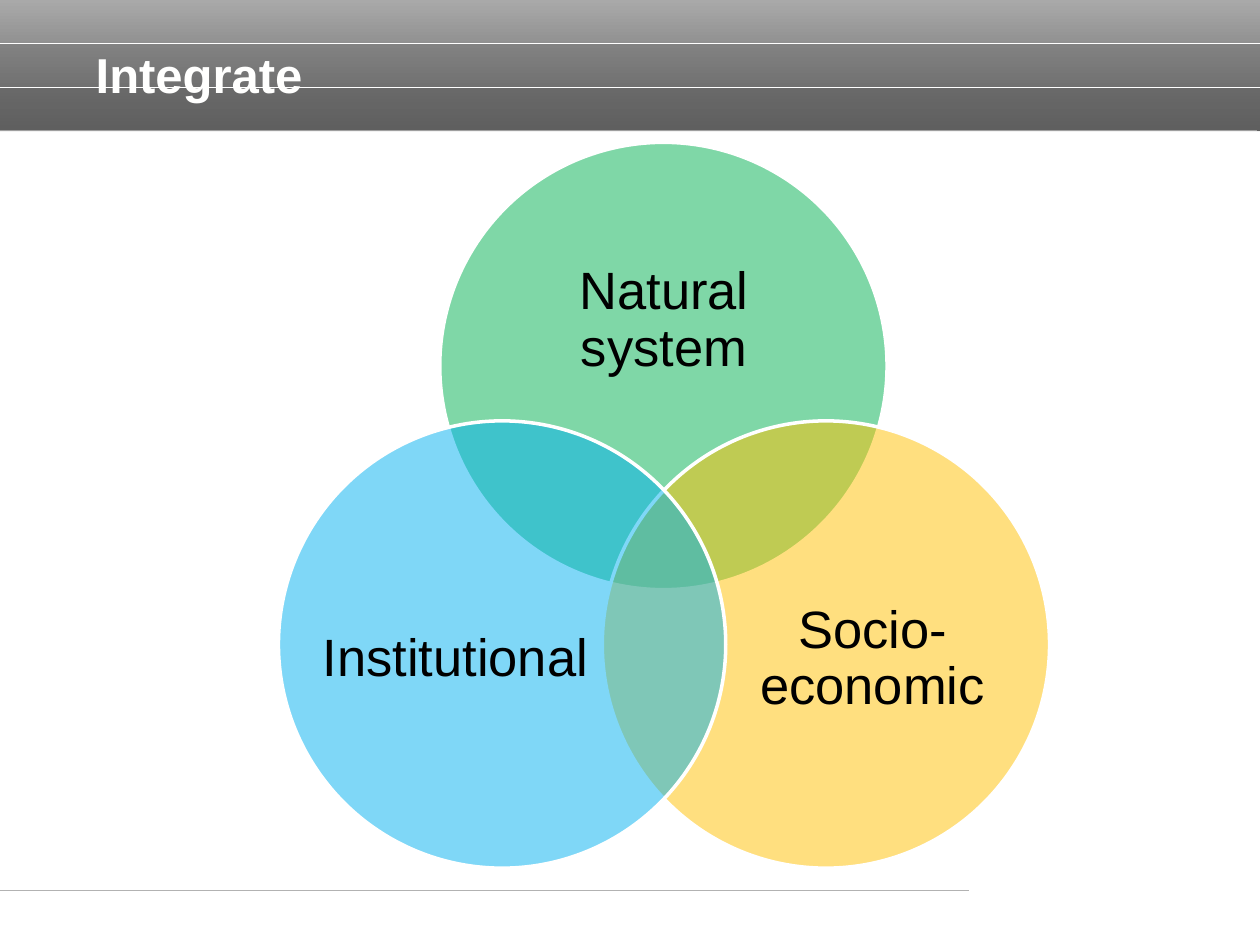
from lxml.etree import SubElement
from pptx import Presentation
from pptx.dml.color import RGBColor
from pptx.enum.shapes import MSO_CONNECTOR, MSO_SHAPE
from pptx.enum.text import MSO_ANCHOR, PP_ALIGN
from pptx.oxml.ns import qn
from pptx.util import Inches, Pt

COLORS = {
    "white": "FFFFFF",
    "title": "FFFFFE",
    "black": "000000",
    "silver": "B2B2B2",
    "gray": "5F5F5F",
    "green": "00B050",
    "amber": "FFC000",
    "blue": "00B0F0",
}
BAND_HEIGHT = 1.04
STRIPE_HEIGHT = BAND_HEIGHT / 3
CIRCLE_SIZE = 3.55


def rgb(name):
    return RGBColor.from_string(COLORS[name])


def add_filled(slide, preset, box, color, opacity):
    shape = slide.shapes.add_shape(preset, *map(Inches, box))
    shape.shadow.inherit = False
    shape.fill.solid()
    shape.fill.fore_color.rgb = rgb(color)
    tint = shape.fill._xPr.find(qn("a:solidFill"))[0]
    SubElement(tint, qn("a:alpha")).set("val", str(opacity * 1000))
    shape.line.fill.background()
    return shape


def add_gradient_band(slide):
    band = slide.shapes.add_shape(
        MSO_SHAPE.RECTANGLE, 0, 0, Inches(10), Inches(BAND_HEIGHT))
    band.shadow.inherit = False
    band.line.fill.background()
    band.fill.gradient()
    band.fill.gradient_angle = 270
    for stop, color, position in zip(
            band.fill.gradient_stops, ("silver", "gray"), (0, 1)):
        stop.color.rgb = rgb(color)
        stop.position = position


def add_rule(slide, start, end, y, color):
    rule = slide.shapes.add_connector(
        MSO_CONNECTOR.STRAIGHT, Inches(start), Inches(y), Inches(end), Inches(y))
    rule.line.color.rgb = rgb(color)
    rule.line.width = Pt(0.75)
    SubElement(rule._element.spPr, qn("a:effectLst"))


def add_text(slide, text, box, size, color, top_inset=0, bold=False):
    label = slide.shapes.add_textbox(*map(Inches, box))
    frame = label.text_frame
    frame.word_wrap = True
    frame.margin_left = frame.margin_right = frame.margin_bottom = 0
    frame.margin_top = Inches(top_inset)
    frame.text = text
    paragraph = frame.paragraphs[0]
    paragraph.font.name = "Arial"
    paragraph.font.size = Pt(size)
    paragraph.font.bold = bold
    paragraph.font.color.rgb = rgb(color)
    return frame


def add_venn_set(slide, name, color, corner, label_box):
    circle = add_filled(
        slide, MSO_SHAPE.OVAL, (*corner, CIRCLE_SIZE, CIRCLE_SIZE), color, 50)
    circle.line.color.rgb = rgb("white")
    circle.line.width = Pt(2)
    frame = add_text(slide, name, label_box, 30, "black")
    frame.vertical_anchor = MSO_ANCHOR.MIDDLE
    paragraph = frame.paragraphs[0]
    paragraph.alignment = PP_ALIGN.CENTER
    paragraph.line_spacing = 0.9


def add_header(slide):
    add_gradient_band(slide)
    add_rule(slide, 0, 9.98, BAND_HEIGHT, "white")
    add_rule(slide, 0, 7.69, 7.07, "silver")
    for row, opacity in enumerate((10, 35, 60)):
        add_filled(slide, MSO_SHAPE.RECTANGLE,
                   (0, row * STRIPE_HEIGHT, 10, STRIPE_HEIGHT), "gray", opacity)
    for row in (1, 2):
        add_rule(slide, 0, 10, row * STRIPE_HEIGHT, "white")
    add_text(slide, "Integrate", (0.76, 0.26, 8.96, 0.67), 28, "title",
             top_inset=0.09, bold=True)


def main():
    deck = Presentation()
    deck.slide_width, deck.slide_height = Inches(10), Inches(7.5)
    slide = deck.slides.add_slide(deck.slide_layouts[6])
    add_header(slide)
    venn_sets = (
        ("Natural system", "green", (3.49, 1.13), (3.97, 1.75, 2.6, 1.6)),
        ("Socio-economic", "amber", (4.78, 3.34), (5.86, 4.26, 2.13, 1.95)),
        ("Institutional", "blue", (2.21, 3.34), (2.55, 4.26, 2.13, 1.95)),
    )
    for name, color, corner, label_box in venn_sets:
        add_venn_set(slide, name, color, corner, label_box)
    deck.save("out.pptx")


if __name__ == "__main__":
    main()
